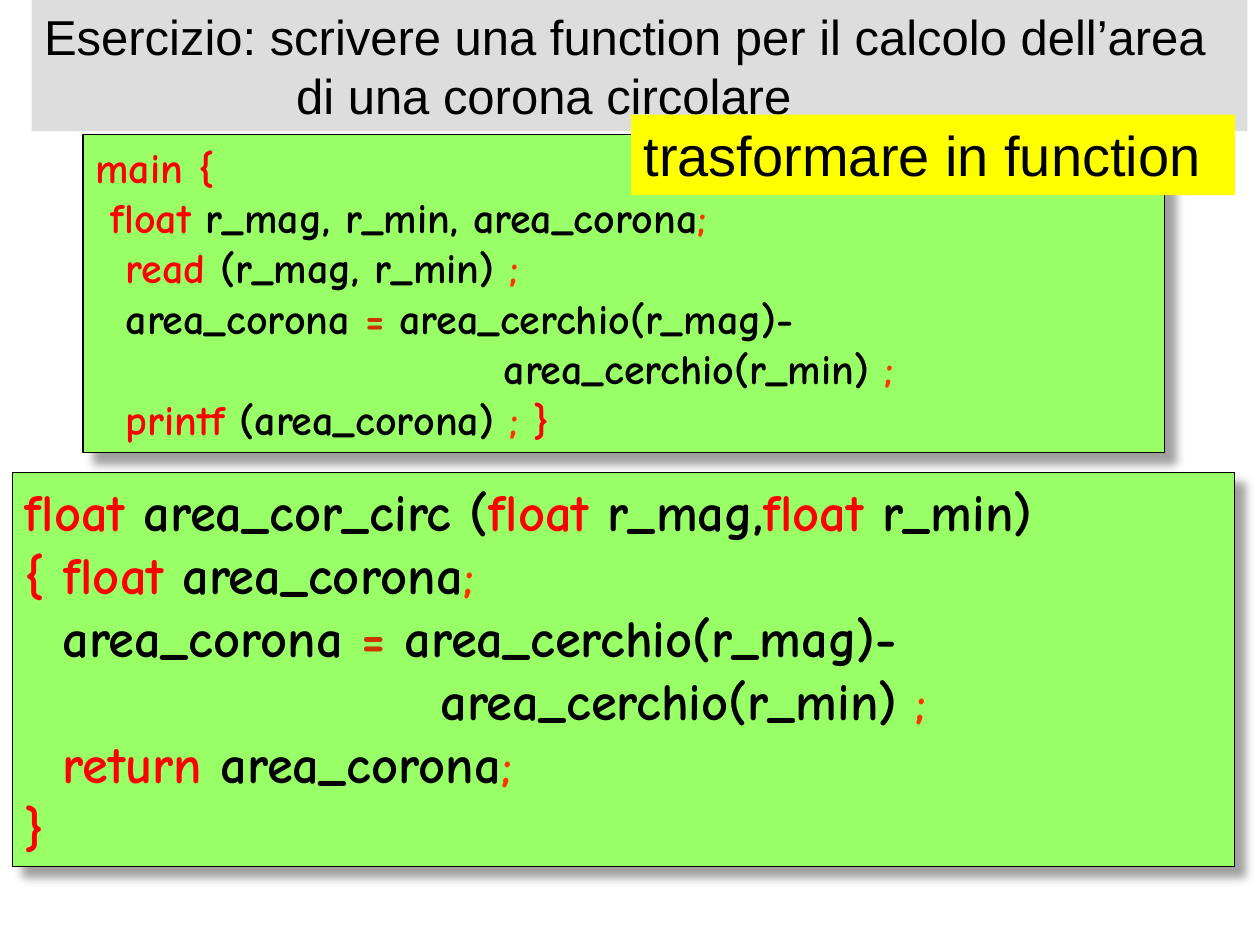
from lxml.etree import SubElement
from pptx import Presentation
from pptx.dml.color import RGBColor
from pptx.enum.shapes import MSO_SHAPE
from pptx.enum.text import MSO_ANCHOR, MSO_AUTO_SIZE, PP_ALIGN
from pptx.oxml.ns import qn
from pptx.util import Inches, Pt

BLACK = RGBColor(0x00, 0x00, 0x00)
RED = RGBColor(0xFF, 0x00, 0x00)
ORANGE = RGBColor(0xFF, 0x33, 0x00)
BRICK = RGBColor(0xCC, 0x33, 0x00)
GREEN = RGBColor(0x99, 0xFF, 0x66)
GREY = RGBColor(0xDD, 0xDD, 0xDD)
YELLOW = RGBColor(0xFF, 0xFF, 0x00)

# Content: each line is (indent in inches, [(text, colour), ...])
TITLE = [
    (0, [("Esercizio: scrivere una function per il calcolo dell’area", BLACK)]),
    (2, [("di una corona circolare", BLACK)]),
]
LABEL = [(0, [("trasformare in function", BLACK)])]
DIFFERENCE = [("area_corona ", BLACK), ("= ", BRICK), ("area_cerchio(r_mag)-", BLACK)]
SUBTRAHEND = [("area_cerchio(r_min)", BLACK), (" ;", ORANGE)]
MAIN_CODE = [
    (0, [("main {", RED)]),
    (0.12, [("float ", RED), ("r_mag, r_min, area_corona", BLACK), (";", ORANGE)]),
    (0.24, [("read ", RED), ("(r_mag, r_min)", BLACK), (" ;", ORANGE)]),
    (0.24, DIFFERENCE),
    (3.24, SUBTRAHEND),
    (0.24, [("printf ", RED), ("(area_corona)", BLACK), (" ; ", ORANGE), ("}", RED)]),
]
FUNCTION_CODE = [
    (0, [("float ", RED), ("area_cor_circ (", BLACK), ("float ", RED),
         ("r_mag,", BLACK), ("float ", RED), ("r_min)", BLACK)]),
    (0, [("{ float ", RED), ("area_corona", BLACK), (";", ORANGE)]),
    (0.3, DIFFERENCE),
    (3.3, SUBTRAHEND),
    (0.3, [("return ", RED), ("area_corona", BLACK), (";", ORANGE)]),
    (0, [("}", RED)]),
]


def place(box, left, top, width, height, fill):
    box.left, box.top = Inches(left), Inches(top)
    box.width, box.height = Inches(width), Inches(height)
    box.fill.solid()
    box.fill.fore_color.rgb = fill


def write(box, lines, font, size, bold=False, align=PP_ALIGN.LEFT, mark_size=None):
    frame = box.text_frame
    frame.word_wrap = True
    frame.auto_size = MSO_AUTO_SIZE.NONE
    frame.vertical_anchor = MSO_ANCHOR.TOP
    for index, (indent, spans) in enumerate(lines):
        para = frame.paragraphs[0] if index == 0 else frame.add_paragraph()
        para.alignment = align
        para.line_spacing = 1.0
        para.space_before = Pt(0)
        para.font.name, para.font.size, para.font.bold = font, Pt(size), bold
        properties = para._p.get_or_add_pPr()
        properties.set("marL", str(Inches(indent)))
        properties.set("indent", "0")
        for text, colour in spans:
            span = para.add_run()
            span.text = text
            span.font.color.rgb = colour
            if mark_size and colour == ORANGE:
                span.font.size = Pt(mark_size)


def add_box(page, bounds, fill):
    box = page.shapes.add_shape(MSO_SHAPE.RECTANGLE, 0, 0, 0, 0)
    place(box, *bounds, fill)
    box.shadow.inherit = False
    box.line.fill.background()
    return box


def add_code(page, bounds, lines, size, mark_size=None):
    box = add_box(page, bounds, GREEN)
    box.line.color.rgb = BLACK
    box.line.width = Pt(0.75)
    # Soft grey shadow to the lower right
    effects = box._element.spPr.find(qn("a:effectLst"))
    shadow = SubElement(effects, qn("a:outerShdw"), blurRad=str(Pt(5)), dist=str(Pt(8.5)),
                        dir="2700000", algn="tl", rotWithShape="0")
    colour = SubElement(shadow, qn("a:srgbClr"), val="808080")
    SubElement(colour, qn("a:alpha"), val="75000")
    write(box, lines, "Comic Neue", size, True, PP_ALIGN.JUSTIFY, mark_size)


def main():
    deck = Presentation()
    deck.slide_width, deck.slide_height = Inches(10), Inches(7.5)
    page = deck.slides.add_slide(deck.slide_layouts[5])

    # Title band
    title = page.shapes.title
    place(title, 0.25, 0, 9.65, 1.04, GREY)
    write(title, TITLE, "Arial", 28)

    # Code panels and the label over the first one
    add_code(page, (0.66, 1.07, 8.58, 2.52), MAIN_CODE, 24)
    label = add_box(page, (5.01, 0.91, 4.79, 0.64), YELLOW)
    write(label, LABEL, "Arial", 32)
    add_code(page, (0.1, 3.75, 9.7, 3.13), FUNCTION_CODE, 30, 28)

    deck.save("out.pptx")


if __name__ == "__main__":
    main()
